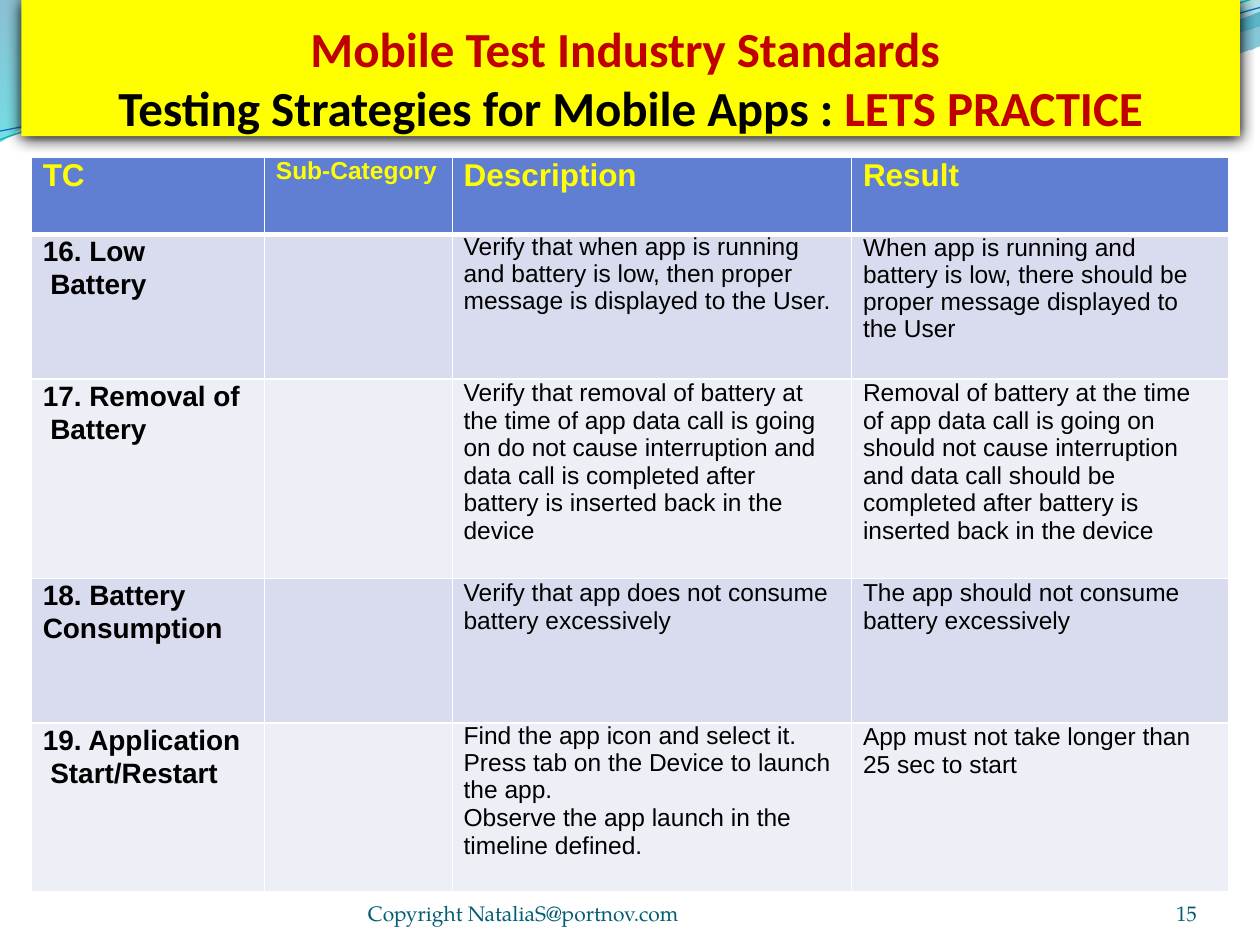
from dataclasses import dataclass

from lxml import etree
from pptx import Presentation
from pptx import util as u
from pptx.dml.color import RGBColor
from pptx.enum import text
from pptx.oxml import ns

Inches, Pt = u.Inches, u.Pt


@dataclass(frozen=True)
class Theme:
    """Colours, fonts and type sizes of the slide."""
    banner: str = "FFFF00"
    accent: str = "C00000"
    ink: str = "000000"
    white: str = "FFFFFF"
    header: str = "607ED2"
    bands: tuple = ("D9DCEF", "EDEFF7")
    footer: str = "045D75"
    title_font: str = "Calibri"
    table_font: str = "Arial"
    footer_font: str = "TeX Gyre Pagella"
    title_size: int = 28
    head_size: int = 18
    label_size: int = 16
    body_size: int = 14
    footer_size: int = 12


THEME = Theme()

GRADIENT_WAVES = [
    ([(0, 0), (4.4, -0.01), (4.76, 0.17, 6.64, 0.63, 7.58, 0.63),
      (8.53, 0.63, 9.58, 0.26, 10, 0.09), (10.01, 0.36),
      (9.83, 0.44, 8.7, 0.76, 7.46, 0.75),
      (6.22, 0.75, 3.82, 0.28, 2.57, 0.34),
      (1.29, 0.36, 0.46, 0.83, -0.01, 1.13)],
     [("0074A1", 45), ("00C6CF", 55)]),
    ([(4.79, -0.01), (5.09, 0.11, 6.82, 0.62, 7.69, 0.65),
      (8.56, 0.69, 9.61, 0.32, 10, 0.21), (10, 0)],
     [("00A1A9", 30), ("008BBF", 45)]),
]
LINE_WAVES = [
    ([(0, 1.11), (0.48, 0.93, 1.58, 0.57, 2.77, 0.52),
      (3.95, 0.47, 5.93, 0.89, 7.13, 0.8),
      (8.33, 0.71, 9.38, 0.15, 9.98, -0.02)], "0AB8BF", 0.85),
    ([(0, 1.04), (0.47, 0.96, 1.64, 0.61, 2.83, 0.56),
      (4.03, 0.51, 5.97, 0.84, 7.17, 0.75),
      (8.36, 0.67, 9.41, 0.21, 10, 0.06)], "0F6FC6", 0.75),
]

COLUMNS = [1.85, 1.49, 3.17, 2.99]
ROWS = [0.61, 1.15, 1.58, 1.15, 1.34]
HEADINGS = [("TC", THEME.head_size), ("Sub-Category", THEME.body_size),
            ("Description", THEME.head_size), ("Result", THEME.head_size)]
CASES = [
    ("16. Low Battery", 0.06,
     [("Verify that when app is running and battery is low, then proper "
       "message is displayed to the User.", 0.98)],
     [("When app is running and battery is low, there should be proper "
       "message displayed to the User", 0.99)]),
    ("17. Removal of Battery", 0.06,
     [("Verify that removal of battery at the time of app data call is going "
       "on do not cause interruption and data call is completed after "
       "battery is inserted back in the device", 1.0)],
     [("Removal of battery at the time of app data call is going on should "
       "not cause interruption and data call should be completed after "
       "battery is inserted back in the device", 1.0)]),
    ("18. Battery Consumption", 0,
     [("Verify that app does not consume battery excessively", Pt(16))],
     [("The app should not consume battery excessively", Pt(16))]),
    ("19. Application Start/Restart", 0.06,
     [("Find the app icon and select it. Press tab on the Device to launch "
       "the app.", 0.98),
      ("Observe the app launch in the timeline defined.", 1.01)],
     [("App must not take longer than 25 sec to start", Pt(16))]),
]


def add_span(para, words, font, size, color, bold=False):
    """Add one formatted run."""
    span = para.add_run()
    span.text = words
    span.font.name, span.font.size = font, Pt(size)
    span.font.bold = bold
    span.font.color.rgb = RGBColor.from_string(color)


def add_wave(page, steps, closed):
    """Trace lines and cubic curves as a freeform behind the layouts."""
    points = [(Inches(step[i]), Inches(step[i + 1]))
              for step in steps for i in range(0, len(step), 2)]
    builder = page.shapes.build_freeform(*points[0])
    builder.add_line_segments(points[1:], close=closed)
    wave = builder.convert_to_shape()
    wave.shadow.inherit = False
    segments = iter(list(wave._element.iter(ns.qn("a:lnTo"))))
    for step in steps[1:]:
        first = next(segments)
        if len(step) == 6:
            curve = etree.Element(ns.qn("a:cubicBezTo"))
            first.addprevious(curve)
            for segment in (first, next(segments), next(segments)):
                curve.append(segment[0])
                segment.getparent().remove(segment)
    return wave


def add_backdrop(page):
    """Draw the translucent waves and thin lines on the slide master."""
    waves = []
    for steps, stops in GRADIENT_WAVES:
        wave = add_wave(page, steps, True)
        wave.line.fill.background()
        wave.fill.gradient()
        wave.fill.gradient_angle = 270
        for stop, (color, opacity) in zip(wave.fill.gradient_stops, stops):
            stop.color.rgb = RGBColor.from_string(color)
        for node, (color, opacity) in zip(
                wave._element.spPr.iter(ns.qn("a:srgbClr")), stops):
            etree.SubElement(node, ns.qn("a:alpha"), val=str(opacity * 1000))
        waves.append(wave)
    for steps, color, width in LINE_WAVES:
        wave = add_wave(page, steps, False)
        wave.fill.background()
        wave.line.color.rgb = RGBColor.from_string(color)
        wave.line.width = Pt(width)
        waves.append(wave)
    tree = page.slide_layout.slide_master.shapes._spTree
    for index, wave in enumerate(waves, 2):
        wave._element.nvSpPr.cNvPr.set("id", str(100 + index))
        tree.insert(index, wave._element)


def add_title(page, left, top, width, height):
    """Place the yellow banner title with its soft shadow."""
    title = page.shapes.title
    title.left, title.top, title.width, title.height = left, top, width, height
    title.fill.solid()
    title.fill.fore_color.rgb = RGBColor.from_string(THEME.banner)
    effects = etree.SubElement(title._element.spPr, ns.qn("a:effectLst"))
    shadow = etree.SubElement(effects, ns.qn("a:outerShdw"),
                              blurRad=str(Pt(8.5)), dist=str(Pt(1)),
                              dir="5400000", rotWithShape="0")
    etree.SubElement(shadow, ns.qn("a:srgbClr"), val=THEME.ink)
    frame = title.text_frame
    frame.auto_size = text.MSO_AUTO_SIZE.NONE
    frame.word_wrap = True
    frame.vertical_anchor = text.MSO_ANCHOR.BOTTOM
    frame.margin_left = frame.margin_right = frame.margin_bottom = 0
    frame.margin_top = Inches(0.05)
    para = frame.paragraphs[0]
    para.alignment = text.PP_ALIGN.CENTER
    font, size = THEME.title_font, THEME.title_size
    add_span(para, "Mobile Test Industry Standards ", font, size, THEME.accent, True)
    para.add_line_break()
    add_span(para, "Testing Strategies for Mobile Apps : ", font, size, THEME.ink, True)
    add_span(para, "LETS PRACTICE", font, size, THEME.accent, True)


def style_cell(cell, color, top, bottom):
    """Set the fill, margins and white borders of a cell."""
    cell.margin_left, cell.margin_right = Inches(0.09), Inches(0.13)
    cell.margin_top = cell.margin_bottom = 0
    cell.fill.solid()
    cell.fill.fore_color.rgb = RGBColor.from_string(color)
    edges = [("lnL", 1), ("lnR", 1), ("lnT", top), ("lnB", bottom)]
    for index, (edge, width) in enumerate(edges):
        line = etree.Element(ns.qn("a:" + edge), w=str(Pt(width)))
        paint = etree.SubElement(line, ns.qn("a:solidFill"))
        etree.SubElement(paint, ns.qn("a:srgbClr"), val=THEME.white)
        cell._tc.get_or_add_tcPr().insert(index, line)


def add_cases(page, left, top, width, height):
    """Build the table of test cases."""
    grid = page.shapes.add_table(len(ROWS), len(COLUMNS), left, top,
                                 width, height).table
    grid.first_row = grid.horz_banding = False
    for column, size in zip(grid.columns, COLUMNS):
        column.width = Inches(size)
    for index, size in enumerate(ROWS):
        grid.rows[index].height = Inches(size)
        color = THEME.bands[(index - 1) % 2] if index else THEME.header
        for cell in grid.rows[index].cells:
            style_cell(cell, color, 3 if index == 1 else 1, 1 if index else 3)
    for cell, (words, size) in zip(grid.rows[0].cells, HEADINGS):
        cell.margin_right = 0
        add_span(cell.text_frame.paragraphs[0], words, THEME.table_font, size,
                 THEME.banner, True)
    for row, (label, hang, *details) in enumerate(CASES, 1):
        cell = grid.cell(row, 0)
        cell.margin_right = Inches(0.15)
        para = cell.text_frame.paragraphs[0]
        para.line_spacing = Pt(19)
        para._p.get_or_add_pPr().set("marL", str(Inches(hang)))
        para._p.get_or_add_pPr().set("indent", str(-Inches(hang)))
        add_span(para, label, THEME.table_font, THEME.label_size, THEME.ink, True)
        for column, detail in enumerate(details, 2):
            frame = grid.cell(row, column).text_frame
            for index, (words, spacing) in enumerate(detail):
                para = frame.add_paragraph() if index else frame.paragraphs[0]
                para.line_spacing = spacing
                add_span(para, words, THEME.table_font, THEME.body_size, THEME.ink)


def add_footer(page, words, align, left, top, width, height):
    """Place one footer text on the bottom of its box."""
    frame = page.shapes.add_textbox(left, top, width, height).text_frame
    frame.word_wrap = True
    frame.vertical_anchor = text.MSO_ANCHOR.BOTTOM
    frame.margin_left = frame.margin_right = 0
    frame.margin_top = frame.margin_bottom = 0
    frame.paragraphs[0].alignment = align
    add_span(frame.paragraphs[0], words, THEME.footer_font, THEME.footer_size,
             THEME.footer)


def main():
    """Build and save the deck."""
    deck = Presentation()
    deck.slide_width, deck.slide_height = Inches(10), Inches(7.5)
    page = deck.slides.add_slide(deck.slide_layouts[5])
    add_backdrop(page)
    add_title(page, Inches(0.17), 0, Inches(9.67), Inches(1.08))
    add_cases(page, Inches(0.25), Inches(1.25), Inches(9.5), Inches(5.83))
    add_footer(page, "15", text.PP_ALIGN.RIGHT,
               Inches(8.67), Inches(6.95), Inches(0.83), Inches(0.4))
    add_footer(page, "Copyright NataliaS@portnov.com", text.PP_ALIGN.LEFT,
               Inches(2.92), Inches(6.95), Inches(3.67), Inches(0.4))
    deck.save("out.pptx")


if __name__ == "__main__":
    main()
